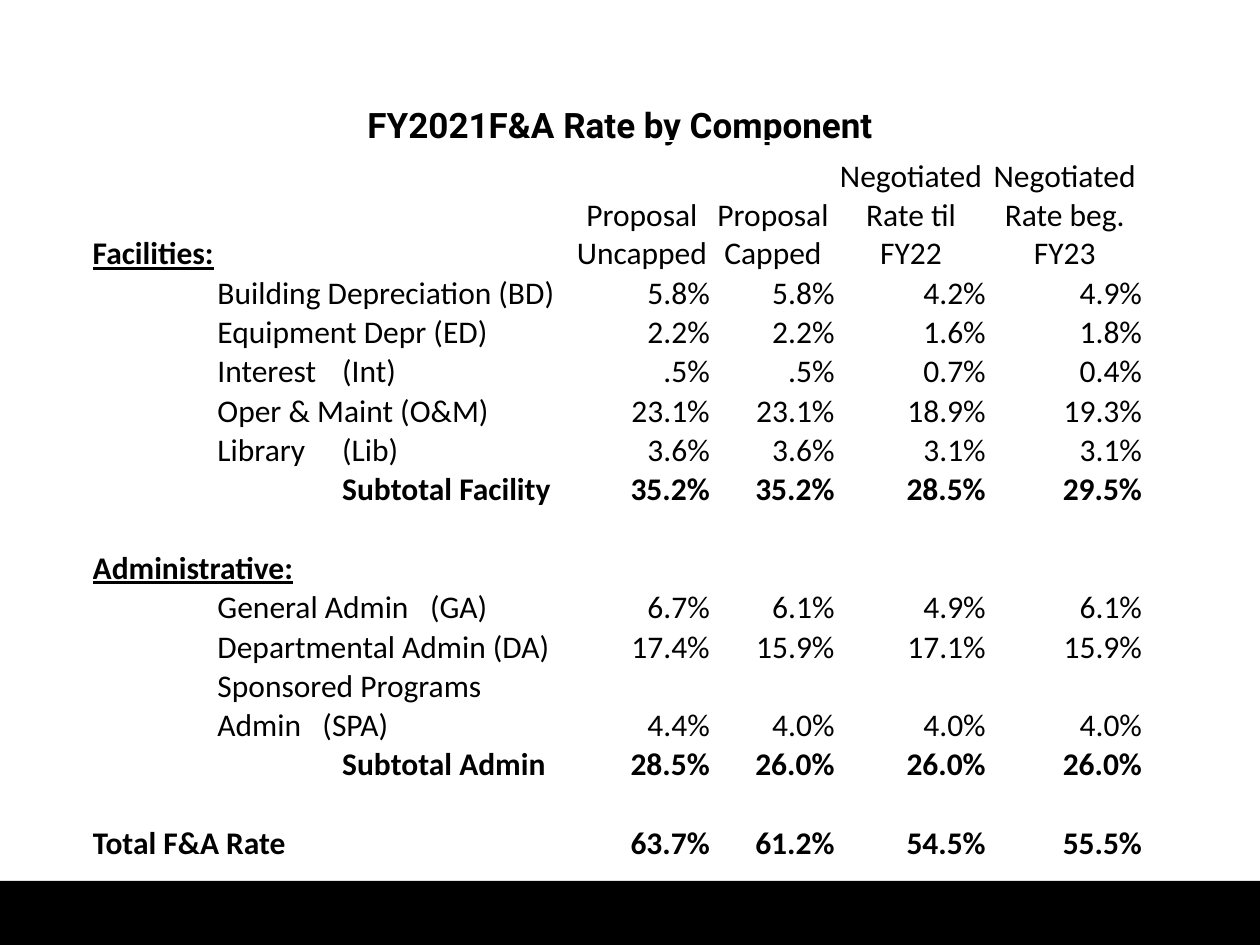
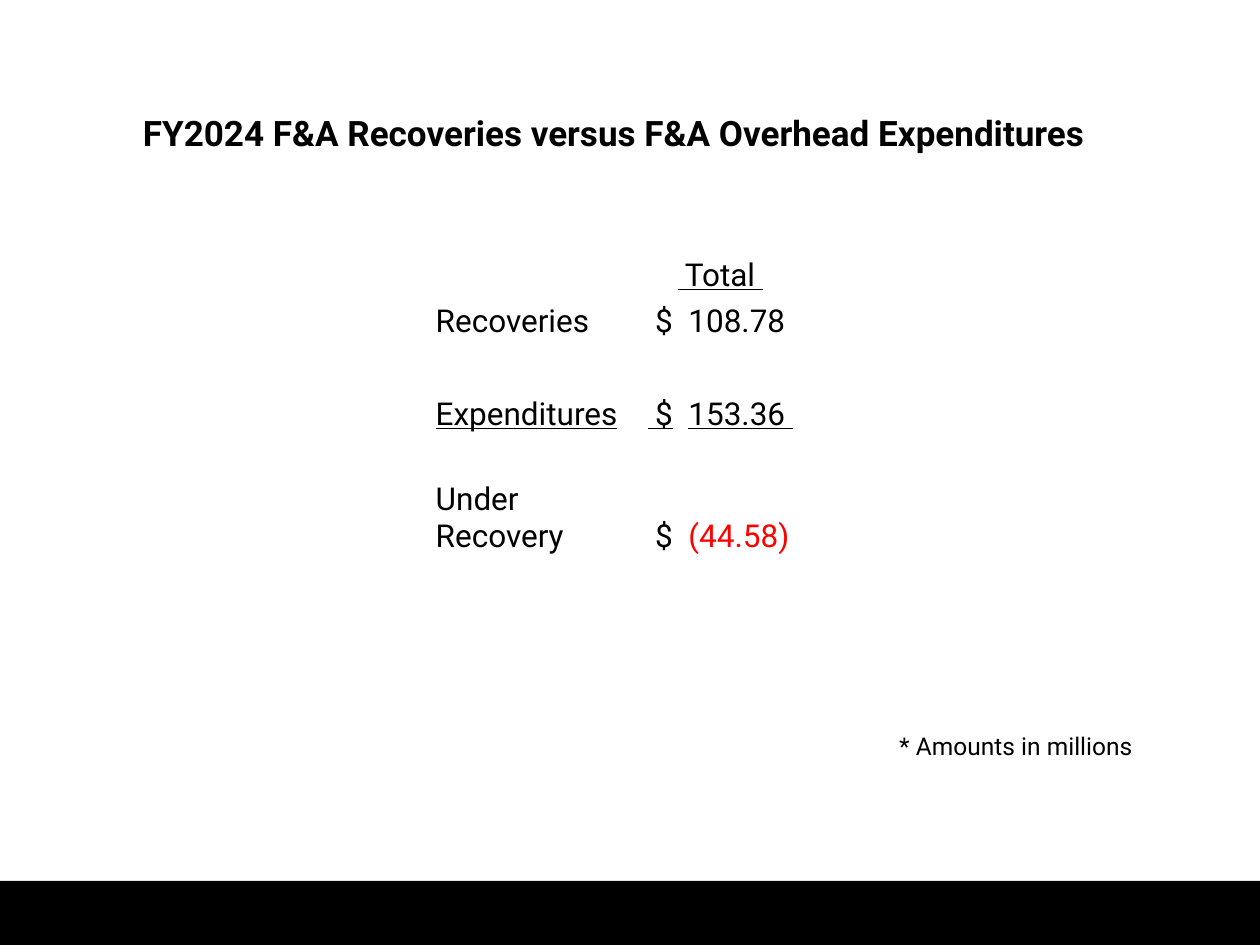
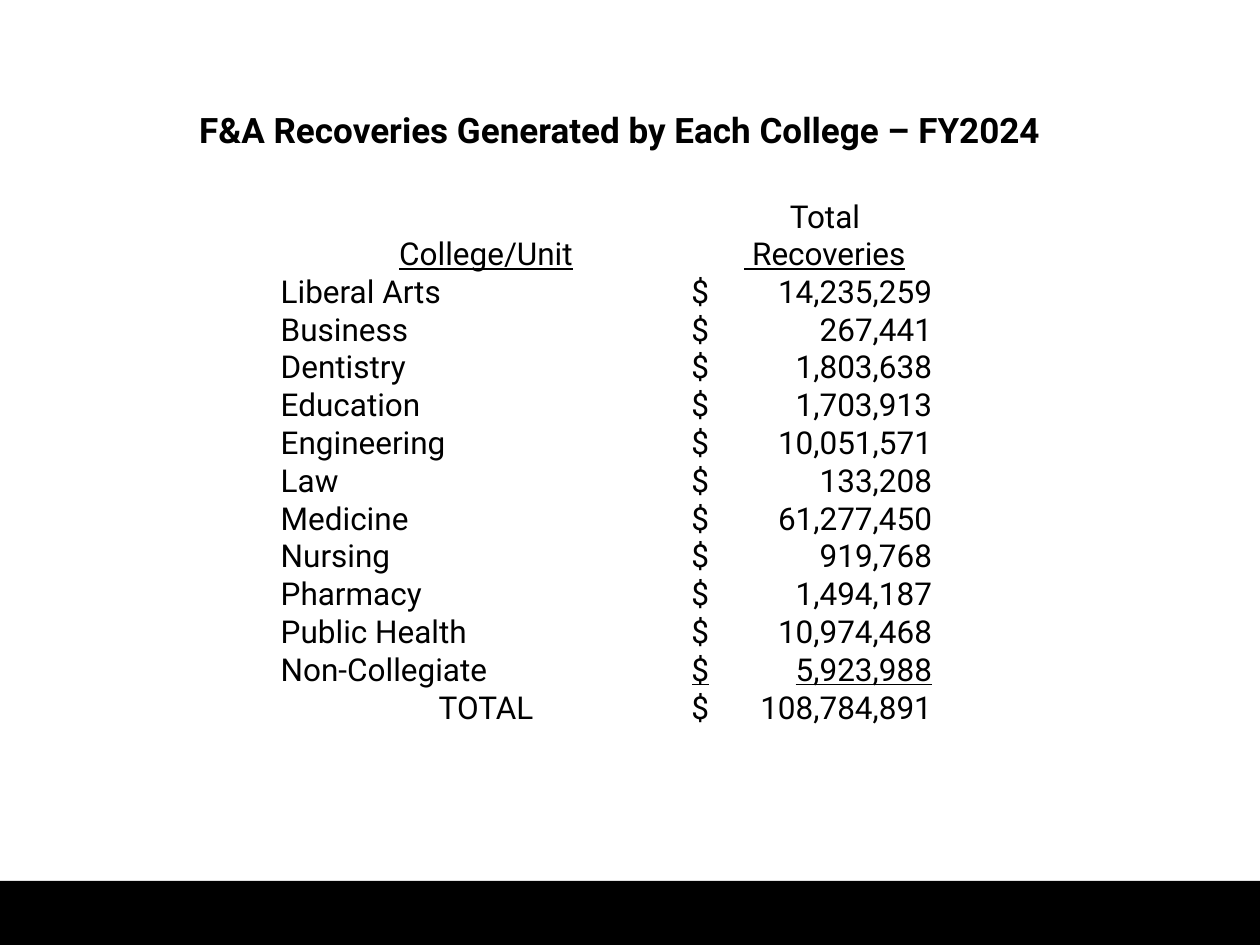
from dataclasses import dataclass
from typing import Any, Optional, Sequence

from pptx import Presentation
from pptx.dml.color import RGBColor
from pptx.enum.shapes import MSO_SHAPE
from pptx.enum.text import MSO_ANCHOR, MSO_AUTO_SIZE, PP_ALIGN
from pptx.oxml.ns import qn
from pptx.util import Pt

# Shared style
BLACK = RGBColor(0x00, 0x00, 0x00)
WHITE = RGBColor(0xFF, 0xFF, 0xFF)
RED = RGBColor(0xFF, 0x00, 0x00)
LEFT, CENTER, RIGHT = PP_ALIGN.LEFT, PP_ALIGN.CENTER, PP_ALIGN.RIGHT
BOTTOM, MIDDLE = MSO_ANCHOR.BOTTOM, MSO_ANCHOR.MIDDLE
NO_AUTOFIT = MSO_AUTO_SIZE.NONE
RECTANGLE = MSO_SHAPE.RECTANGLE
SLIDE_WIDTH, SLIDE_HEIGHT = Pt(720), Pt(540)
BAND_TOP = Pt(503.3)
TITLE_HEIGHT = Pt(31.5)
TITLE_ONLY_LAYOUT = 5
TABLE_FORMAT = {"size": Pt(18), "name": "Roboto"}
RATE_FORMAT = {"size": Pt(18), "name": "Calibri"}
TITLE_FORMAT = {"size": Pt(20), "name": "Roboto", "bold": True}
NOTE_FORMAT = {"size": Pt(14), "name": "Roboto"}


@dataclass(frozen=True)
class Cell:
    """Table cell; the underline marks its last line, red_text follows the text."""
    text: str = ""
    align: PP_ALIGN = LEFT
    bold: bool = False
    underline: bool = False
    red_text: str = ""
    span: int = 1


@dataclass(frozen=True)
class TableStyle:
    font_format: dict[str, Any]
    inset: float = 0
    tab_stops: tuple[tuple[float, str], ...] = ()


@dataclass(frozen=True)
class RateRow:
    """Labels for the first three columns (None continues a span), then rates."""
    labels: tuple[Optional[str], ...]
    rates: str = ""
    bold: bool = False
    underline: bool = False
    height: float = 22.3


EMPTY = Cell()


def format_run(run: Any, font_format: dict[str, Any], color: RGBColor = BLACK) -> None:
    for attribute, value in font_format.items():
        setattr(run.font, attribute, value)
    run.font.color.rgb = color


def add_tab_stops(paragraph: Any, stops: Sequence[tuple[float, str]]) -> None:
    properties = paragraph._p.get_or_add_pPr()
    tab_list = properties.makeelement(qn("a:tabLst"), {})
    for position, alignment in stops:
        tab = tab_list.makeelement(
            qn("a:tab"), {"pos": str(Pt(position)), "algn": alignment})
        tab_list.append(tab)
    properties.append(tab_list)


def add_band(presentation: Any, slide: Any) -> None:
    """Draw the bottom band and move it to the master, shared by all slides."""
    band = slide.shapes.add_shape(
        RECTANGLE, 0, BAND_TOP, SLIDE_WIDTH, SLIDE_HEIGHT - BAND_TOP)
    band.shadow.inherit = False
    band.fill.solid()
    band.fill.fore_color.rgb = BLACK
    band.line.fill.background()
    presentation.slide_master.shapes.element.append(band.element)


def add_titled_slide(presentation: Any, text: str, left: float, top: float,
                     width: float) -> Any:
    layout = presentation.slide_layouts[TITLE_ONLY_LAYOUT]
    slide = presentation.slides.add_slide(layout)
    title = slide.shapes.title
    title.left, title.top = Pt(left), Pt(top)
    title.width, title.height = Pt(width), TITLE_HEIGHT
    title.text = text
    frame = title.text_frame
    frame.vertical_anchor = MIDDLE
    frame.auto_size = NO_AUTOFIT
    frame.paragraphs[0].alignment = CENTER
    format_run(frame.paragraphs[0].runs[0], TITLE_FORMAT)
    return slide


def fill_cell(table_cell: Any, cell: Cell, style: TableStyle) -> None:
    lines = cell.text.split("\n")
    frame = table_cell.text_frame
    for number, line in enumerate(lines, start=1):
        paragraph = frame.paragraphs[0] if number == 1 else frame.add_paragraph()
        paragraph.text = line
        paragraph.alignment = cell.align
        if "\t" in line:
            add_tab_stops(paragraph, style.tab_stops)
        line_format = style.font_format | {
            "bold": cell.bold,
            "underline": cell.underline and number == len(lines),
        }
        for run in paragraph.runs:
            format_run(run, line_format)
        if cell.red_text:
            run = paragraph.add_run()
            run.text = cell.red_text
            format_run(run, line_format, RED)


def add_table(slide: Any, left: float, top: float, widths: Sequence[float],
              heights: Sequence[float], rows: Sequence[Sequence[Optional[Cell]]],
              style: TableStyle) -> None:
    table = slide.shapes.add_table(
        len(rows), len(widths), Pt(left), Pt(top), Pt(sum(widths)),
        Pt(sum(heights))).table
    table.first_row = table.horz_banding = False
    for column, width in zip(table.columns, widths):
        column.width = Pt(width)
    for row, height in zip(table.rows, heights):
        row.height = Pt(height)
    cell_format = {
        "vertical_anchor": BOTTOM,
        "margin_left": Pt(style.inset),
        "margin_right": Pt(style.inset),
        "margin_top": Pt(style.inset),
        "margin_bottom": 0,
    }
    for row_index, row in enumerate(rows):
        for column_index, cell in enumerate(row):
            table_cell = table.cell(row_index, column_index)
            table_cell.fill.background()
            for attribute, value in cell_format.items():
                setattr(table_cell, attribute, value)
            if cell is None:
                continue
            if cell.span > 1:
                table_cell.merge(
                    table.cell(row_index, column_index + cell.span - 1))
            if cell.text:
                fill_cell(table_cell, cell, style)


# Slide 1: rates by component
RATE_WIDTHS = (71.3, 71.3, 132.5, 78.5, 71.3, 86.4, 89.3)
RATE_HEADERS = ("Proposal Uncapped", "Proposal Capped",
                "Negotiated Rate til FY22", "Negotiated Rate beg. FY23")
RATE_ROWS = (
    RateRow(("", "Building Depreciation (BD)", None), "5.8% 5.8% 4.2% 4.9%"),
    RateRow(("", "Equipment Depr (ED)", None), "2.2% 2.2% 1.6% 1.8%"),
    RateRow(("", "Interest", "(Int)"), ".5% .5% 0.7% 0.4%"),
    RateRow(("", "Oper & Maint (O&M)", None), "23.1% 23.1% 18.9% 19.3%"),
    RateRow(("", "Library", "(Lib)"), "3.6% 3.6% 3.1% 3.1%"),
    RateRow(("", "", "Subtotal Facility"), "35.2% 35.2% 28.5% 29.5%", bold=True),
    RateRow(("", "", "")),
    RateRow(("Administrative:", None, ""), bold=True, underline=True),
    RateRow(("", "General Admin\t(GA)", None), "6.7% 6.1% 4.9% 6.1%"),
    RateRow(("", "Departmental Admin (DA)", None), "17.4% 15.9% 17.1% 15.9%"),
    RateRow(("", "Sponsored Programs\vAdmin\t(SPA)", None),
            "4.4% 4.0% 4.0% 4.0%", height=44),
    RateRow(("", "", "Subtotal Admin"), "28.5% 26.0% 26.0% 26.0%", bold=True),
    RateRow(("", "", "")),
    RateRow(("Total F&A Rate", None, ""), "63.7% 61.2% 54.5% 55.5%", bold=True),
)


def rate_cells(row: RateRow) -> list[Optional[Cell]]:
    following = row.labels[1:] + ("",)
    cells: list[Optional[Cell]] = [
        None if label is None else Cell(
            label, LEFT, row.bold, row.underline, span=2 if after is None else 1)
        for label, after in zip(row.labels, following)]
    rates = row.rates.split() or [""] * len(RATE_HEADERS)
    return cells + [Cell(rate, RIGHT, row.bold) for rate in rates]


def build_rates(presentation: Any) -> Any:
    slide = add_titled_slide(
        presentation, "FY2021F&A Rate by Component", 9.4, 55.5, 690)
    header = [Cell("Facilities:", bold=True, underline=True), EMPTY, EMPTY]
    header += [Cell(text, CENTER) for text in RATE_HEADERS]
    add_table(slide, 52.5, 80.6, RATE_WIDTHS,
              [75.6] + [row.height for row in RATE_ROWS],
              [header] + [rate_cells(row) for row in RATE_ROWS],
              TableStyle(RATE_FORMAT, 0.5, ((60, "l"), (121.5, "l"))))
    return slide


# Slide 2: recoveries against expenditures
BALANCE_ROWS = (
    (EMPTY, EMPTY, Cell(" Total ", CENTER, underline=True)),
    (Cell("Recoveries"), EMPTY, Cell(" $\t108.78")),
    (EMPTY, EMPTY, EMPTY),
    (Cell("Expenditures", underline=True), EMPTY,
     Cell(" $\t153.36 ", underline=True)),
    (EMPTY, EMPTY, EMPTY),
    (Cell("Under Recovery"), EMPTY, Cell(" $\t", red_text="(44.58)")),
)


def build_balance(presentation: Any) -> None:
    slide = add_titled_slide(
        presentation, "FY2024 F&A Recoveries versus F&A Overhead Expenditures",
        59.8, 59.8, 582)
    add_table(slide, 249, 138.2, (118, 2.9, 83.5), [30] + [26.5] * 4 + [43],
              BALANCE_ROWS, TableStyle(TABLE_FORMAT, tab_stops=((23.5, "l"),)))
    note = slide.shapes.add_textbox(Pt(282.2), Pt(414), Pt(372.2), Pt(24.5))
    note.text_frame.word_wrap = True
    paragraph = note.text_frame.paragraphs[0]
    paragraph.text = "* Amounts in millions"
    paragraph.alignment = RIGHT
    format_run(paragraph.runs[0], NOTE_FORMAT)


# Slide 3: recoveries by college
COLLEGE_RECOVERIES = (
    ("Liberal Arts", "14,235,259"),
    ("Business", "267,441"),
    ("Dentistry", "1,803,638"),
    ("Education", "1,703,913"),
    ("Engineering", "10,051,571"),
    ("Law", "133,208"),
    ("Medicine", "61,277,450"),
    ("Nursing", "919,768"),
    ("Pharmacy", "1,494,187"),
    ("Public Health", "10,974,468"),
    ("Non-Collegiate", "5,923,988"),
)


def build_colleges(presentation: Any) -> None:
    slide = add_titled_slide(
        presentation, "F&A Recoveries Generated by Each College – FY2024",
        63.2, 58, 582)
    last_college = COLLEGE_RECOVERIES[-1][0]
    rows = [(Cell("College/Unit", CENTER, underline=True),
             Cell("Total\n Recoveries", CENTER, underline=True))]
    rows += [(Cell(college), Cell(f"$\t{amount}", underline=college == last_college))
             for college, amount in COLLEGE_RECOVERIES]
    rows.append((Cell("TOTAL", CENTER), Cell("$\t108,784,891")))
    add_table(slide, 160.4, 113, (234.7, 152.6), [43.2] + [21.6] * (len(rows) - 1),
              rows, TableStyle(TABLE_FORMAT, tab_stops=((137.5, "r"),)))


def main() -> None:
    presentation = Presentation()
    presentation.slide_width, presentation.slide_height = SLIDE_WIDTH, SLIDE_HEIGHT
    background = presentation.slide_master.background.fill
    background.solid()
    background.fore_color.rgb = WHITE
    first_slide = build_rates(presentation)
    add_band(presentation, first_slide)
    build_balance(presentation)
    build_colleges(presentation)
    presentation.save("out.pptx")


if __name__ == "__main__":
    main()
